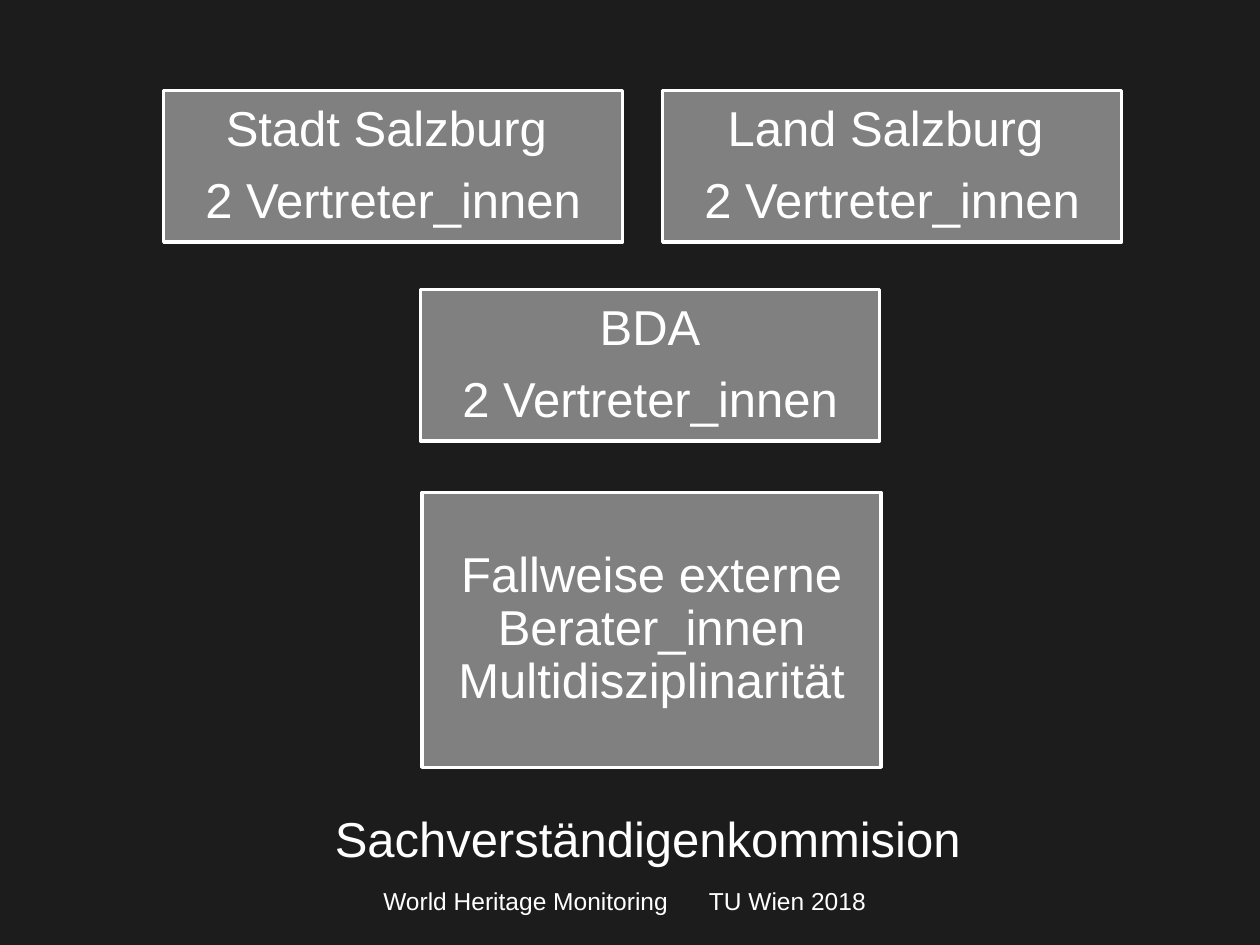
"""Build the slide on the members of the Salzburg expert commission."""

from pptx import Presentation
from pptx.dml.color import RGBColor
from pptx.enum.shapes import MSO_SHAPE as Shape
from pptx.enum.text import MSO_ANCHOR as Anchor, PP_ALIGN as Align
from pptx.util import Cm, Pt

COLORS = {"background": "1C1C1C", "box": "808080", "white": "FFFFFF"}
FONT = "Arial"
BOX_WIDTH = 9.25
BOX_INSET = 0.3
MEMBERS = "2 Vertreter_innen"

BOXES = [
    (3.3, 1.83, 3.05, ["Stadt Salzburg ", MEMBERS]),
    (13.36, 1.83, 3.05, ["Land Salzburg ", MEMBERS]),
    (8.48, 5.84, 3.05, ["BDA", MEMBERS]),
    (8.51, 9.93, 5.54, ["Fallweise externe Berater_innen Multidisziplinarität"]),
]
LABELS = [
    (6.5, 16.18, 15.01, 1.45, "Sachverständigenkommision", 28, Align.LEFT),
    (2.69, 17.73, 11.03, 0.61, "World Heritage Monitoring", 14, Align.RIGHT),
    (14.04, 17.73, 8.46, 0.61, "TU Wien 2018", 14, Align.LEFT),
]


def color(name):
    return RGBColor.from_string(COLORS[name])


def write(paragraph, text, size, alignment):
    paragraph.alignment = alignment
    run = paragraph.add_run()
    run.text = text
    run.font.name = FONT
    run.font.size = Pt(size)
    run.font.color.rgb = color("white")


def add_box(slide, left, top, height, lines):
    shape = slide.shapes.add_shape(
        Shape.RECTANGLE, Cm(left), Cm(top), Cm(BOX_WIDTH), Cm(height))
    shape.shadow.inherit = False
    shape.fill.solid()
    shape.fill.fore_color.rgb = color("box")
    shape.line.color.rgb = color("white")
    shape.line.width = Pt(2)
    frame = shape.text_frame
    frame.word_wrap = True
    frame.vertical_anchor = Anchor.MIDDLE
    frame.margin_left = frame.margin_right = Cm(BOX_INSET)
    frame.margin_top = frame.margin_bottom = Cm(BOX_INSET)
    for index, line in enumerate(lines):
        paragraph = frame.add_paragraph() if index else frame.paragraphs[0]
        paragraph.line_spacing = 0.9
        paragraph.space_after = Pt(11)
        write(paragraph, line, 28, Align.CENTER)


def add_label(slide, left, top, width, height, text, size, alignment):
    label = slide.shapes.add_textbox(Cm(left), Cm(top), Cm(width), Cm(height))
    label.text_frame.word_wrap = True
    write(label.text_frame.paragraphs[0], text, size, alignment)


def main():
    presentation = Presentation()
    presentation.slide_width = Cm(25.4)
    presentation.slide_height = Cm(19.05)
    slide = presentation.slides.add_slide(presentation.slide_layouts[6])
    slide.background.fill.solid()
    slide.background.fill.fore_color.rgb = color("background")
    for box in BOXES:
        add_box(slide, *box)
    for label in LABELS:
        add_label(slide, *label)
    presentation.save("out.pptx")


if __name__ == "__main__":
    main()
